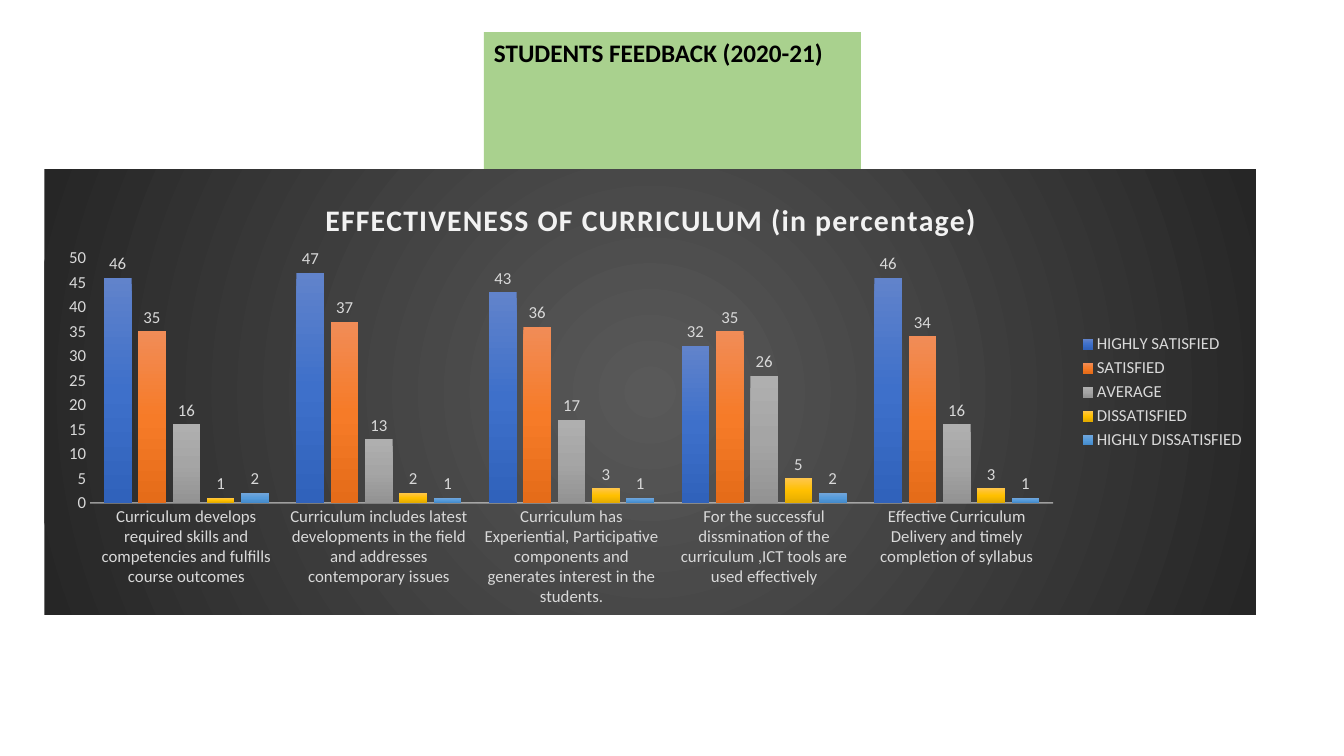
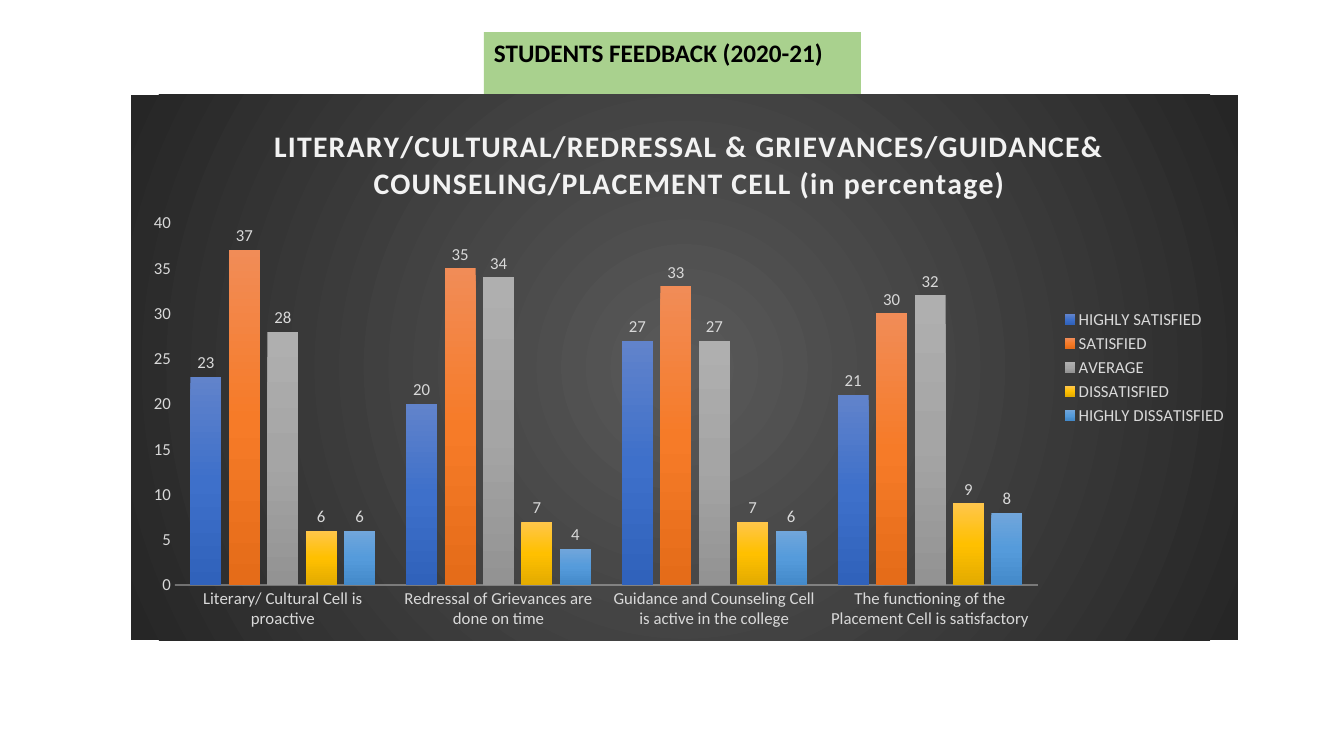
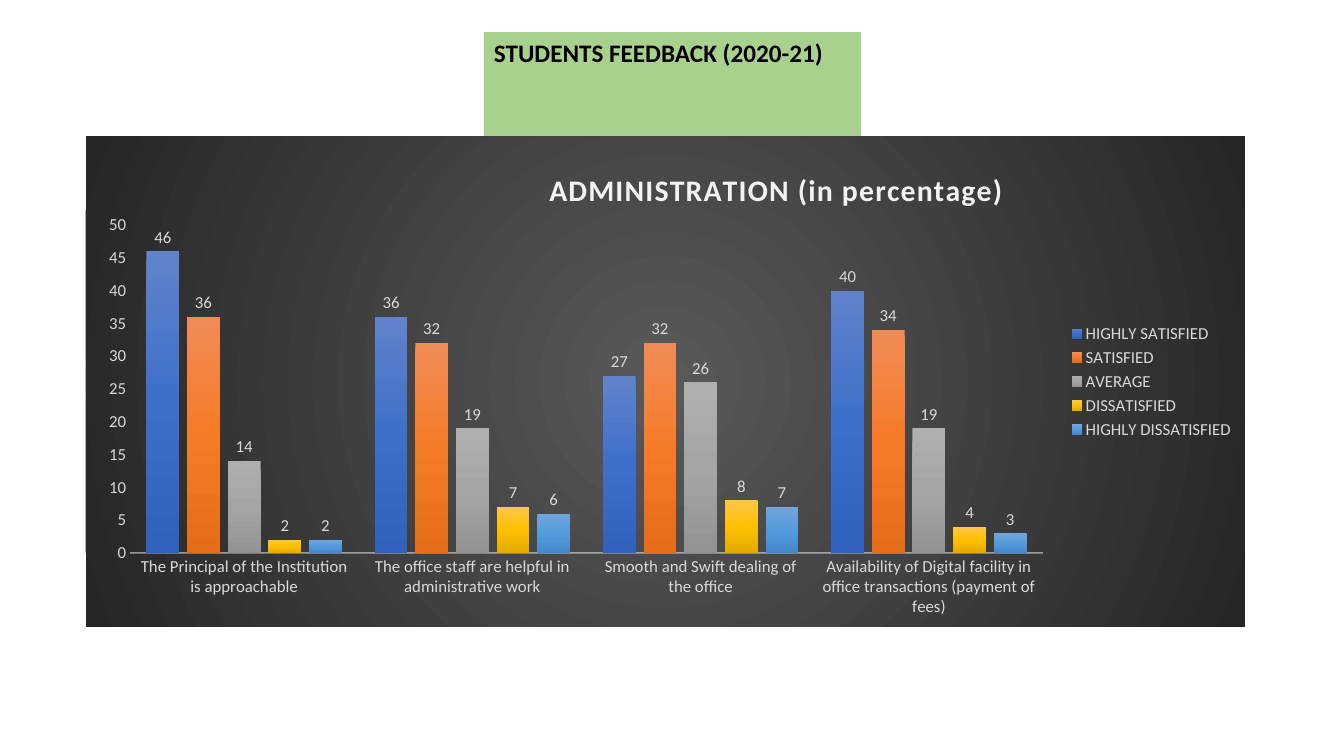
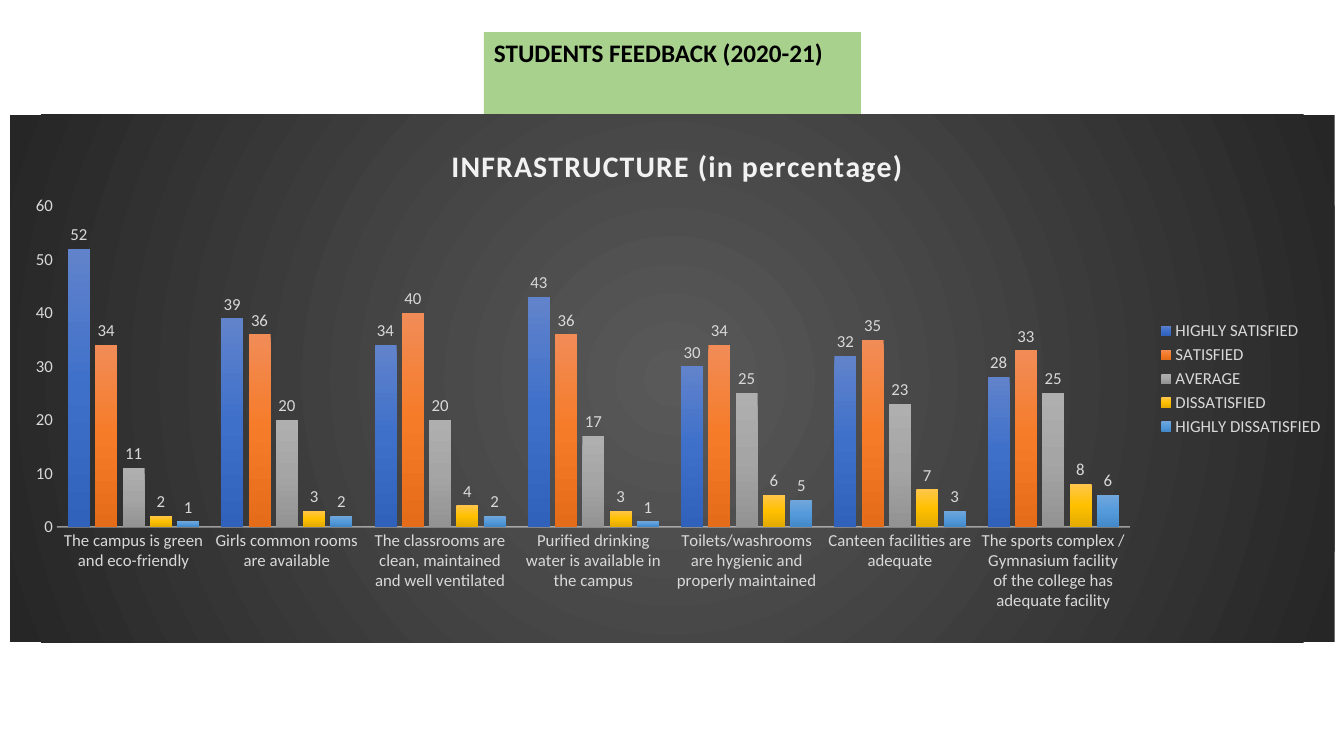
"""Build four slides of student feedback column charts."""
from pptx import Presentation, oxml, util as u
from pptx.chart import data as cd
from pptx.dml import color as dc
from pptx.enum import chart as ce, text as te
from pptx.oxml import ns

Pt = u.Pt


def hue(code):
    return dc.RGBColor.from_string(code)


def grad(codes, way):
    step = 100000 // (len(codes) - 1)
    stops = "".join(
        f'<a:gs pos="{i * step}"><a:srgbClr val="{hue(c)}"/></a:gs>'
        for i, c in enumerate(codes)
    )
    return oxml.parse_xml(
        f'<a:gradFill {ns.nsdecls("a")} rotWithShape="1">'
        f"<a:gsLst>{stops}</a:gsLst>{way}</a:gradFill>"
    )


HEAD = "STUDENTS FEEDBACK (2020-21)"
DOWN = '<a:lin ang="5400000" scaled="0"/>'
ROUND = '<a:path path="circle"><a:fillToRect l="50000" t="50000" r="50000" b="50000"/></a:path>'
DARK = ("595959", "262626")
KEYS = {
    "HIGHLY SATISFIED": ("6183CB", "3E70CA", "3062BB"),
    "SATISFIED": ("F18C57", "F67B28", "E56C19"),
    "AVERAGE": ("AFAFAF", "A5A5A5", "939393"),
    "DISSATISFIED": ("FFC64B", "FFC000", "E3AB00"),
    "HIGHLY DISSATISFIED": ("71A6DB", "559BDB", "448ACA"),
}
HEADFONT = {"name": "Calibri", "size": Pt(18), "bold": True}
NAMEFONT = {"name": "Calibri", "size": Pt(21.3), "bold": True}
NOTEFONT = {"name": "Calibri", "size": Pt(12), "bold": False}

PAGES = [
    {
        "name": "EFFECTIVENESS OF CURRICULUM (in percentage)",
        "box": (31.7, 121, 865.4, 318.2),
        "plot": (64.3, 184.3, 687.9, 175),
        "spot": (228.6, 139),
        "top": 50, "step": 5,
        "rows": [
            ("Curriculum develops required skills and competencies and fulfills course outcomes", 46, 35, 16, 1, 2),
            ("Curriculum includes latest developments in the field and addresses contemporary issues", 47, 37, 13, 2, 1),
            ("Curriculum has Experiential, Participative components and generates interest in the students.", 43, 36, 17, 3, 1),
            ("For the successful dissmination of the curriculum ,ICT tools are used effectively", 32, 35, 26, 5, 2),
            ("Effective Curriculum Delivery and timely completion of syllabus", 46, 34, 16, 3, 1),
        ],
    },
    {
        "name": "LITERARY/CULTURAL/REDRESSAL & GRIEVANCES/GUIDANCE& COUNSELING/PLACEMENT CELL (in percentage)",
        "box": (93.6, 67.7, 790.6, 389.5),
        "plot": (125, 159.3, 616.4, 258.6),
        "spot": (192, 86),
        "top": 40, "step": 5,
        "rows": [
            ("Literary/ Cultural Cell is proactive", 23, 37, 28, 6, 6),
            ("Redressal of Grievances are done on time", 20, 35, 34, 7, 4),
            ("Guidance and Counseling Cell is active in the college", 27, 33, 27, 7, 6),
            ("The functioning of the Placement Cell is satisfactory", 21, 30, 32, 9, 8),
        ],
    },
    {
        "name": "ADMINISTRATION (in percentage)",
        "box": (61.2, 97.2, 828, 350.6),
        "plot": (92.9, 160.7, 652.1, 234.3),
        "spot": (388.6, 117),
        "top": 50, "step": 5,
        "rows": [
            ("The Principal of the Institution is approachable", 46, 36, 14, 2, 2),
            ("The office staff are helpful in administrative work", 36, 32, 19, 7, 6),
            ("Smooth and Swift dealing of the office", 27, 32, 26, 8, 7),
            ("Availability of Digital facility in office transactions (payment of fees)", 40, 34, 19, 4, 3),
        ],
    },
    {
        "name": "INFRASTRUCTURE (in percentage)",
        "box": (7.2, 82.1, 946.1, 376.6),
        "plot": (40.7, 147.1, 766.4, 229.3),
        "spot": (318.6, 100),
        "top": 60, "step": 10,
        "rows": [
            ("The campus is green and eco-friendly", 52, 34, 11, 2, 1),
            ("Girls common rooms are available", 39, 36, 20, 3, 2),
            ("The classrooms are clean, maintained and well ventilated", 34, 40, 20, 4, 2),
            ("Purified drinking water is available in the campus", 43, 36, 17, 3, 1),
            ("Toilets/washrooms are hygienic and properly maintained", 30, 34, 25, 6, 5),
            ("Canteen facilities are adequate", 32, 35, 23, 7, 3),
            ("The sports complex / Gymnasium facility of the college has adequate facility", 28, 33, 25, 8, 6),
        ],
    },
]

deck = Presentation()
deck.slide_width, deck.slide_height = Pt(960), Pt(540)

for page in PAGES:
    slide = deck.slides.add_slide(deck.slide_layouts[5])
    head = slide.shapes.title
    head.left, head.top, head.width, head.height = map(Pt, (345.6, 23, 269.3, 29))
    head.fill.solid()
    head.fill.fore_color.rgb = hue("A9D18E")
    frame = head.text_frame
    frame.text = HEAD
    look = {
        "word_wrap": True,
        "auto_size": te.MSO_AUTO_SIZE.SHAPE_TO_FIT_TEXT,
        "vertical_anchor": te.MSO_ANCHOR.TOP,
    }
    for key, val in look.items():
        setattr(frame, key, val)
    para = frame.paragraphs[0]
    para.alignment = te.PP_ALIGN.LEFT

    cats, *cols = zip(*page["rows"])
    data = cd.CategoryChartData()
    data.categories = cats
    for key, vals in zip(KEYS, cols):
        data.add_series(key, vals)
    chart = slide.shapes.add_chart(
        ce.XL_CHART_TYPE.COLUMN_CLUSTERED, *map(Pt, page["box"]), data
    ).chart
    chart.font.name, chart.font.size = "Calibri", Pt(10)
    back = oxml.parse_xml(f'<c:spPr {ns.nsdecls("c", "a")}><a:ln><a:noFill/></a:ln></c:spPr>')
    back.insert(0, grad(DARK, ROUND))
    chart.font._element.getparent().getparent().getparent().addprevious(back)

    chart.has_title = True
    title = chart.chart_title
    title.include_in_layout = False
    title.text_frame.text = page["name"]
    run = title.text_frame.paragraphs[0].runs[0]
    run._r.get_or_add_rPr().set("spc", "100")

    chart.has_legend = True
    chart.legend.position = ce.XL_LEGEND_POSITION.RIGHT
    chart.legend.include_in_layout = False

    plot = chart.plots[0]
    plot.gap_width, plot.overlap, plot.vary_by_categories = 100, -24, False
    plot.has_data_labels = True
    tags = plot.data_labels
    tags.show_value, tags.position = True, ce.XL_LABEL_POSITION.OUTSIDE_END
    for bars, codes in zip(plot.series, KEYS.values()):
        bars._element.get_or_add_spPr().insert(0, grad(codes, DOWN))

    base, side = chart.category_axis, chart.value_axis
    for axis in (base, side):
        axis.has_major_gridlines = False
        axis.major_tick_mark = axis.minor_tick_mark = ce.XL_TICK_MARK.NONE
    side.minimum_scale, side.maximum_scale, side.major_unit = 0, page["top"], page["step"]
    side.format.line.fill.background()
    line = base.format.line
    line.width = Pt(1)
    line.color.rgb = hue("F2F2F2")
    tint = base._element.find(".//" + ns.qn("c:spPr")).find(".//" + ns.qn("a:srgbClr"))
    tint.append(oxml.parse_xml(f'<a:alpha {ns.nsdecls("a")} val="54000"/>'))

    notes = (base.tick_labels, side.tick_labels, chart.legend, tags)
    fonts = [(n.font, NOTEFONT, "D9D9D9") for n in notes]
    fonts += [(run.font, NAMEFONT, "F2F2F2"), (para.runs[0].font, HEADFONT, "000000")]
    for font, look, code in fonts:
        for key, val in look.items():
            setattr(font, key, val)
        font.color.rgb = hue(code)

    left, top, wide, high = page["box"]
    area = chart._chartSpace.find(".//" + ns.qn("c:plotArea"))
    for part, spot, rank in ((title._element, page["spot"], 1), (area, page["plot"], 0)):
        old = part.find(ns.qn("c:layout"))
        if old is not None:
            part.remove(old)
        x, y, *size = spot
        marks = [("xMode", "edge"), ("yMode", "edge")]
        marks += [("x", round((x - left) / wide, 4)), ("y", round((y - top) / high, 4))]
        if size:
            marks.insert(0, ("layoutTarget", "inner"))
            marks += [("w", round(size[0] / wide, 4)), ("h", round(size[1] / high, 4))]
        body = "".join(f'<c:{key} val="{val}"/>' for key, val in marks)
        part.insert(rank, oxml.parse_xml(
            f'<c:layout {ns.nsdecls("c")}><c:manualLayout>{body}</c:manualLayout></c:layout>'
        ))

deck.save("out.pptx")
